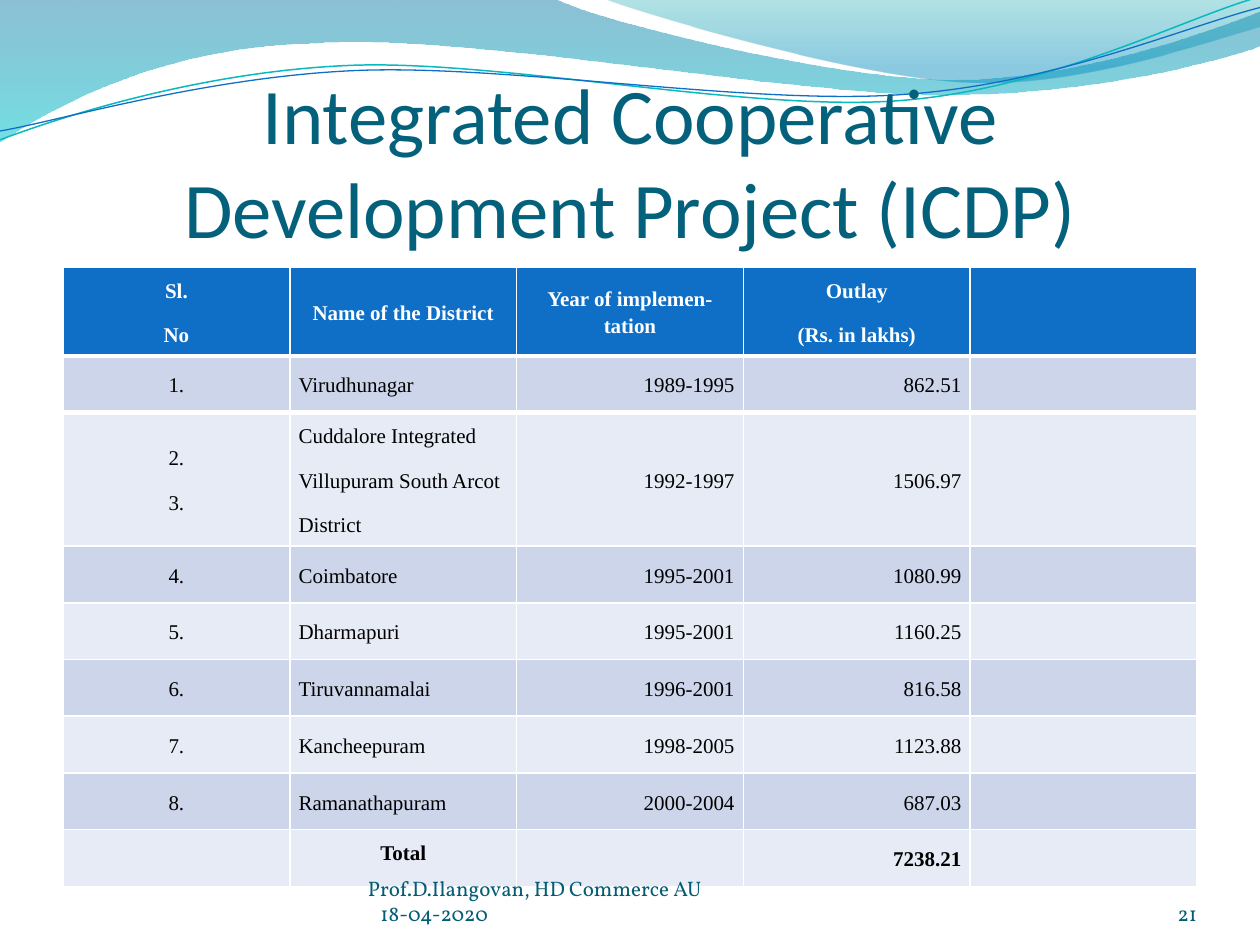
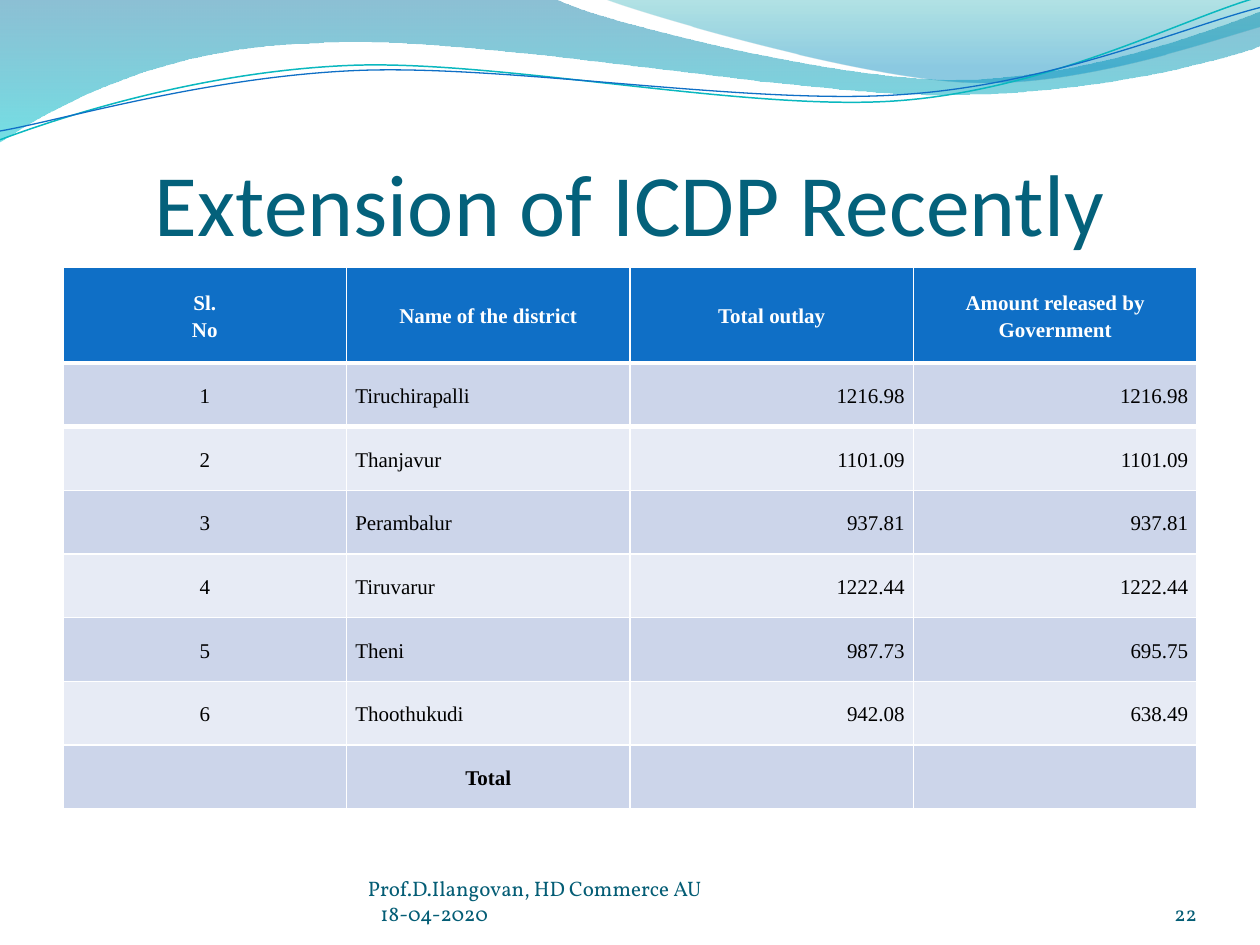
from lxml.etree import SubElement
from pptx import Presentation
from pptx.dml.color import RGBColor as RGB
from pptx.enum.text import MSO_ANCHOR as Anchor, MSO_AUTO_SIZE as Auto, PP_ALIGN as Align
from pptx.oxml.ns import qn
from pptx.util import Inches, Pt

HUES = {
    "title": "04617B", "foot": "045D75", "head": "0F6FC6", "white": "FFFFFF",
    "black": "000000", "dark": "CCD5EA", "light": "E7EBF5",
    "teal": "0AB8BF", "sea": "0074A1", "aqua": "00C6CF",
    "mint": "00A1A9", "sky": "008BBF",
}
UNIT = 1000
SWEEP = [(0, 0), (4.4, -0.01), (4.76, 0.17, 6.64, 0.63, 7.58, 0.63),
         (8.53, 0.63, 9.58, 0.26, 10, 0.09), (10.01, 0.36),
         (9.83, 0.44, 8.7, 0.76, 7.46, 0.75), (6.22, 0.75, 3.82, 0.28, 2.57, 0.34),
         (1.29, 0.36, 0.46, 0.83, -0.01, 1.13), (0, 0)]
CREST = [(4.79, -0.01), (5.09, 0.11, 6.82, 0.62, 7.69, 0.65),
         (8.56, 0.69, 9.61, 0.32, 10, 0.21), (10, 0), (4.79, -0.01)]
UPPER = [(0, 1.11), (0.48, 0.93, 1.58, 0.57, 2.77, 0.52),
         (3.95, 0.47, 5.93, 0.89, 7.13, 0.8), (8.33, 0.71, 9.38, 0.15, 9.98, -0.02)]
LOWER = [(0, 1.04), (0.47, 0.96, 1.64, 0.61, 2.83, 0.56),
         (4.03, 0.51, 5.97, 0.84, 7.17, 0.75), (8.36, 0.67, 9.41, 0.21, 10, 0.06)]
PAST = [
    ["Sl.\nNo", "Name of the District", "Year of implemen-tation",
     "Outlay\n(Rs. in lakhs)", ""],
    ["1.", "Virudhunagar", "1989-1995", "862.51", ""],
    ["2.\n3.", "Cuddalore Integrated\nVillupuram South Arcot\nDistrict",
     "1992-1997", "1506.97", ""],
    ["4.", "Coimbatore", "1995-2001", "1080.99", ""],
    ["5.", "Dharmapuri", "1995-2001", "1160.25", ""],
    ["6.", "Tiruvannamalai", "1996-2001", "816.58", ""],
    ["7.", "Kancheepuram", "1998-2005", "1123.88", ""],
    ["8.", "Ramanathapuram", "2000-2004", "687.03", ""],
    ["", "Total", "", "7238.21", ""],
]
RECENT = [
    ["Sl.\vNo", "Name of the district", "Total outlay", "Amount released by Government"],
    ["1", "Tiruchirapalli", "1216.98", "1216.98"],
    ["2", "Thanjavur", "1101.09", "1101.09"],
    ["3", "Perambalur", "937.81", "937.81"],
    ["4", "Tiruvarur", "1222.44", "1222.44"],
    ["5", "Theni", "987.73", "695.75"],
    ["6", "Thoothukudi", "942.08", "638.49"],
    ["", "Total", "", ""],
]


def hue(name):
    return RGB.from_string(HUES[name])


def style(para, size, face, tint, align, bold=False):
    para.alignment = align
    font = para.font
    font.size, font.name, font.bold = Pt(size), face, bold
    font.color.rgb = hue(tint)


def pad(box, left, top, right, bottom):
    box.margin_left, box.margin_top = Inches(left), Inches(top)
    box.margin_right, box.margin_bottom = Inches(right), Inches(bottom)


def outline(slide, route, close):
    """Draw a route of corners and cubic curves, given in inches."""
    ends = [(round(part[-2] * UNIT), round(part[-1] * UNIT)) for part in route]
    pen = slide.shapes.build_freeform(*ends[0], scale=Inches(1) / UNIT)
    pen.add_line_segments(ends[1:], close=close)
    shape = pen.convert_to_shape()
    shape.shadow.inherit = False
    left, top = (min(values) for values in zip(*ends))
    for node, part in zip(list(shape.element.iter(qn("a:lnTo"))), route[1:]):
        if len(part) == 6:
            node.tag = qn("a:cubicBezTo")
            node.remove(node[0])
            for x, y in zip(part[::2], part[1::2]):
                point = SubElement(node, qn("a:pt"))
                point.set("x", str(round(x * UNIT) - left))
                point.set("y", str(round(y * UNIT) - top))
    return shape


def wave(slide, route, stops):
    shape = outline(slide, route, True)
    shape.line.fill.background()
    shape.fill.gradient()
    shape.fill.gradient_angle = 270
    for stop, (place, name, _) in zip(shape.fill.gradient_stops, stops):
        stop.position, stop.color.rgb = place, hue(name)
    for node, (_, _, alpha) in zip(shape.element.iter(qn("a:gs")), stops):
        SubElement(node[0], qn("a:alpha")).set("val", str(alpha * 1000))
    return shape


def curve(slide, route, name, width):
    shape = outline(slide, route, False)
    shape.fill.background()
    shape.line.color.rgb, shape.line.width = hue(name), Pt(width)
    return shape


def band(slide):
    parts = [
        wave(slide, SWEEP, [(0, "sea", 45), (1, "aqua", 55)]),
        wave(slide, CREST, [(0, "mint", 30), (0.8, "sky", 45)]),
        curve(slide, UPPER, "teal", 0.85),
        curve(slide, LOWER, "head", 0.75),
    ]
    for part in parts:
        slide.slide_layout.shapes.element.append(part.element)


def title(slide, text, size):
    box = slide.shapes.title
    box.left, box.top, box.width, box.height = map(Inches, (0.5, 0.77, 9, 1.25))
    frame = box.text_frame
    frame.text = text
    frame.auto_size, frame.word_wrap = Auto.NONE, True
    frame.vertical_anchor = Anchor.BOTTOM
    pad(frame, 0, 0.05, 0, 0)
    style(frame.paragraphs[0], size, "Calibri", "title", Align.CENTER)


def label(slide, text, left, width, align):
    box = slide.shapes.add_textbox(*map(Inches, (left, 6.95, width, 0.4)))
    frame = box.text_frame
    para = frame.paragraphs[0]
    para.text, frame.word_wrap = text, True
    frame.vertical_anchor = Anchor.BOTTOM
    pad(frame, 0, 0, 0, 0)
    style(para, 12, "Vollkorn", "foot", align)
    return para


def footer(slide, number):
    label(slide, str(number), 8.67, 0.83, Align.RIGHT)
    para = label(slide, "Prof.D.Ilangovan, HD Commerce AU\v18-04-2020",
                 2.92, 3.67, Align.LEFT)
    props = para._p.get_or_add_pPr()
    props.set("marL", str(Inches(0.1)))
    props.set("indent", str(Inches(-0.1)))


def edge(cell, side, width):
    props = cell._tc.get_or_add_tcPr()
    line = SubElement(props, qn(side))
    line.set("w", str(Pt(width)))
    SubElement(SubElement(line, qn("a:solidFill")), qn("a:srgbClr")).set("val", HUES["white"])
    props.insert(0, line)


def fill(cell, text, row, col, bold):
    cell.fill.solid()
    cell.fill.fore_color.rgb = hue("dark" if row % 2 else "head" if row == 0 else "light")
    if row < 2:
        edge(cell, "a:lnT" if row else "a:lnB", 3)
    if not text:
        return
    cell.text = text
    cell.vertical_anchor = Anchor.MIDDLE
    pad(cell, 0.07, 0.07, 0.07, 0.07)
    align = Align.LEFT if col == 1 else Align.RIGHT
    if row == 0 or col == 0 or text == "Total":
        align = Align.CENTER
    for para in cell.text_frame.paragraphs:
        style(para, 12, "Times New Roman", "black" if row else "white", align, bold)
        para.line_spacing, para.space_after = 1.15, Pt(10)


def table(slide, data, heights):
    count = len(data[0])
    grid = slide.shapes.add_table(len(data), count, Inches(0.5), Inches(2.12),
                                  Inches(9), Inches(sum(heights))).table
    for col in grid.columns:
        col.width = Inches(9 / count)
    for row, (texts, height) in enumerate(zip(data, heights)):
        grid.rows[row].height = Inches(height)
        for col, text in enumerate(texts):
            fill(grid.cell(row, col), text, row, col, row in (0, len(data) - 1))
    return grid


def page(deck, text, size, number, data, heights):
    slide = deck.slides.add_slide(deck.slide_layouts[5])
    title(slide, text, size)
    grid = table(slide, data, heights)
    footer(slide, number)
    return slide, grid


def main():
    deck = Presentation()
    deck.slide_width, deck.slide_height = Inches(10), Inches(7.5)
    slide, grid = page(deck, "Integrated Cooperative Development Project (ICDP)",
                       45, 21, PAST, [0.7, 0.45, 1.06] + [0.45] * 6)
    grid.cell(8, 1).vertical_anchor = Anchor.TOP
    band(slide)
    page(deck, "Extension of ICDP Recently", 50, 22, RECENT, [0.76] + [3.54 / 7] * 7)
    deck.save("out.pptx")


if __name__ == "__main__":
    main()
